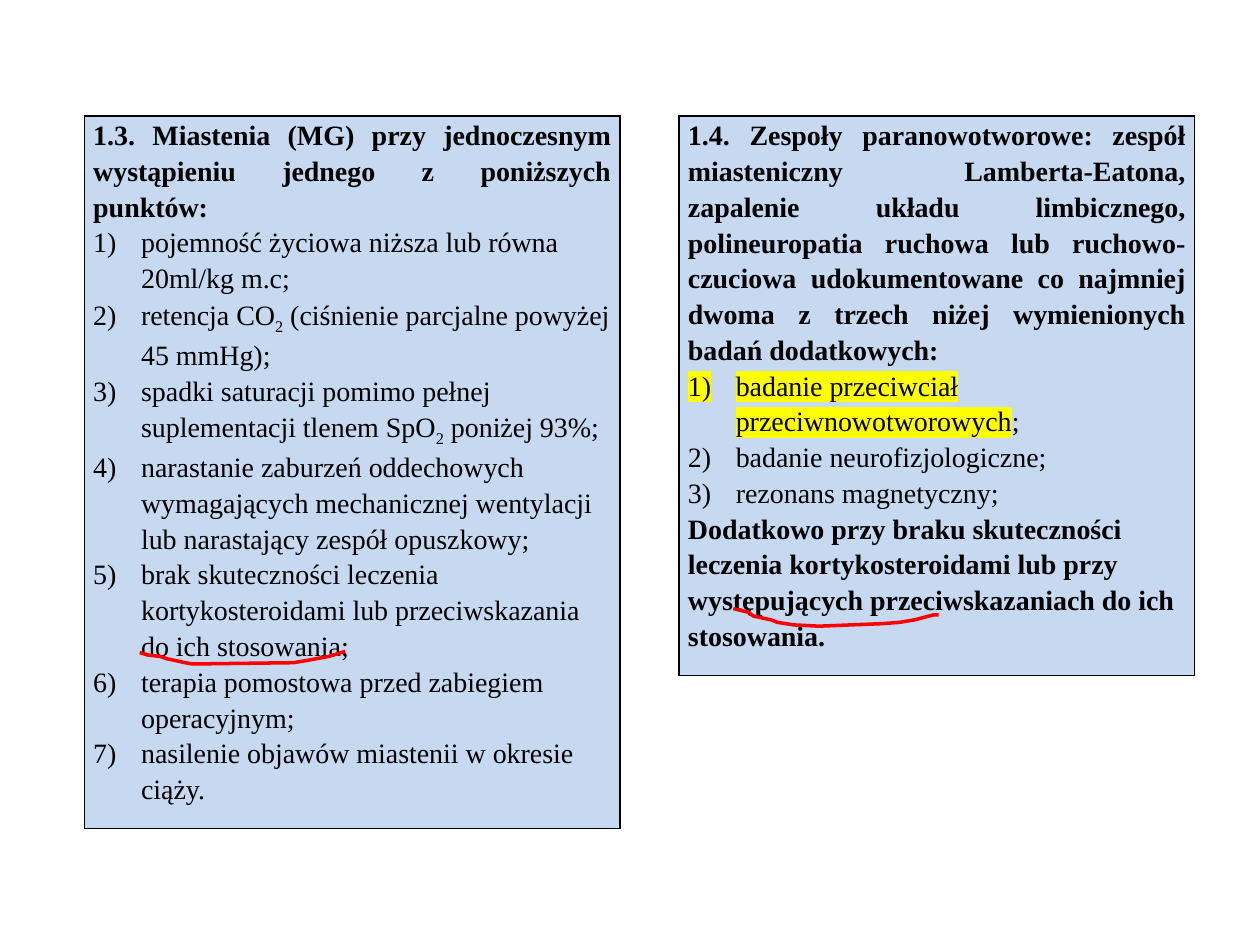
"""Build a slide with two criteria boxes and two hand-drawn red underlines."""
from dataclasses import dataclass

from lxml.etree import SubElement
from pptx import Presentation
from pptx.dml.color import RGBColor
from pptx.enum.text import MSO_ANCHOR as Anchor, PP_ALIGN as Align
from pptx.oxml import parse_xml
from pptx.oxml.ns import nsdecls, qn
from pptx.util import Inches, Pt

COLORS = {"text": "000000", "box": "C6D9F1", "border": "000000",
          "mark": "FFFF00", "stroke": "FF0000"}
FONT = {"name": "Times New Roman", "size": Pt(16)}
CELL = {"margin_left": Inches(0.07), "margin_right": Inches(0.07), "margin_top": 0,
        "margin_bottom": Inches(0.18), "vertical_anchor": Anchor.MIDDLE}
PLAIN_TABLE = {"first_row": False, "horz_banding": False}
INDENT = Inches(0.38)


@dataclass(frozen=True)
class Run:
    text: str
    sub: bool = False
    mark: bool = False


@dataclass(frozen=True)
class Para:
    runs: tuple[Run, ...]
    bold: bool = False
    numbered: bool = False
    align: Align | None = None


@dataclass(frozen=True)
class Box:
    left: float
    width: float
    height: float
    paras: tuple[Para, ...]


def heading(text: str, align: Align = Align.JUSTIFY) -> Para:
    return Para((Run(text),), bold=True, align=align)


def item(*runs: str | Run) -> Para:
    return Para(tuple(Run(r) if isinstance(r, str) else r for r in runs), numbered=True)


BOXES = (
    Box(0.67, 4.25, 5.65, (
        heading("1.3. Miastenia (MG) przy jednoczesnym wystąpieniu jednego z poniższych punktów:"),
        item("pojemność życiowa niższa lub równa 20ml/kg m.c;"),
        item("retencja CO", Run("2", sub=True), " (ciśnienie parcjalne powyżej 45 mmHg);"),
        item("spadki saturacji pomimo pełnej suplementacji tlenem SpO", Run("2", sub=True),
             " poniżej 93%;"),
        item("narastanie zaburzeń oddechowych wymagających mechanicznej wentylacji "
             "lub narastający zespół opuszkowy;"),
        item("brak skuteczności leczenia kortykosteroidami lub przeciwskazania "
             "do ich stosowania;"),
        item("terapia pomostowa przed zabiegiem operacyjnym;"),
        item("nasilenie objawów miastenii w okresie ciąży."),
    )),
    Box(5.39, 4.09, 4.44, (
        heading("1.4. Zespoły paranowotworowe: zespół miasteniczny Lamberta-Eatona, "
                "zapalenie układu limbicznego, polineuropatia ruchowa lub "
                "ruchowo-czuciowa udokumentowane co najmniej dwoma z trzech niżej "
                "wymienionych badań dodatkowych:"),
        item(Run("badanie przeciwciał przeciwnowotworowych", mark=True), ";"),
        item("badanie neurofizjologiczne;"),
        item("rezonans magnetyczny;"),
        heading("Dodatkowo przy braku skuteczności leczenia kortykosteroidami lub przy "
                "występujących przeciwskazaniach do ich stosowania.", Align.LEFT),
    )),
)

UNDERLINES = (
    ((1.11, 5.18), (1.18, 5.2), (1.27, 5.21), (1.33, 5.23), (1.38, 5.24), (1.47, 5.26),
     (1.53, 5.27), (2.33, 5.26), (2.45, 5.24), (2.61, 5.21), (2.71, 5.18), (2.74, 5.17)),
    ((5.82, 4.83), (5.94, 4.86), (5.98, 4.89), (6.12, 4.92), (6.17, 4.94), (6.3, 4.96),
     (6.5, 4.97), (7, 4.95), (7.14, 4.94), (7.26, 4.92), (7.41, 4.88), (7.45, 4.88)),
)


def rgb(key: str) -> RGBColor:
    return RGBColor.from_string(COLORS[key])


def apply(target, values: dict) -> None:
    for name, value in values.items():
        setattr(target, name, value)


def add_run(p, run: Run, bold: bool) -> None:
    r = p.add_run()
    r.text = run.text
    apply(r.font, FONT | {"bold": bold})
    r.font.color.rgb = rgb("text")
    rpr = r._r.get_or_add_rPr()
    if run.sub:
        rpr.set("baseline", "-25000")
    if run.mark:
        rpr.find(qn("a:solidFill")).addnext(parse_xml(
            f'<a:highlight {nsdecls("a")}><a:srgbClr val="{COLORS["mark"]}"/></a:highlight>'))


def add_para(p, para: Para) -> None:
    apply(p, {"line_spacing": 1.15, "alignment": para.align})
    if para.numbered:
        ppr = p._p.get_or_add_pPr()
        ppr.set("marL", str(INDENT))
        ppr.set("indent", str(-INDENT))
        SubElement(ppr, qn("a:buAutoNum"), type="arabicParenR")
    for run in para.runs:
        add_run(p, run, para.bold)


def add_borders(cell) -> None:
    tcpr = cell._tc.get_or_add_tcPr()
    for i, side in enumerate("LRTB"):
        tcpr.insert(i, parse_xml(
            f'<a:ln{side} {nsdecls("a")} w="{Pt(1)}"><a:solidFill>'
            f'<a:srgbClr val="{COLORS["border"]}"/></a:solidFill></a:ln{side}>'))


def add_box(s, box: Box) -> None:
    table = s.shapes.add_table(1, 1, Inches(box.left), Inches(0.92),
                               Inches(box.width), Inches(box.height)).table
    apply(table, PLAIN_TABLE)
    cell = table.cell(0, 0)
    apply(cell, CELL)
    cell.fill.solid()
    cell.fill.fore_color.rgb = rgb("box")
    add_borders(cell)
    tf = cell.text_frame
    for i, para in enumerate(box.paras):
        add_para(tf.add_paragraph() if i else tf.paragraphs[0], para)


def add_underline(s, points: tuple[tuple[float, float], ...]) -> None:
    start, *rest = [(Inches(x), Inches(y)) for x, y in points]
    builder = s.shapes.build_freeform(*start)
    builder.add_line_segments(rest, close=False)
    sp = builder.convert_to_shape()
    sp.shadow.inherit = False
    sp.fill.background()
    sp.line.color.rgb = rgb("stroke")
    sp.line.width = Pt(2)


def main() -> None:
    prs = Presentation()
    apply(prs, {"slide_width": Inches(10), "slide_height": Inches(7.5)})
    s = prs.slides.add_slide(prs.slide_layouts[6])
    for box in BOXES:
        add_box(s, box)
    for points in UNDERLINES:
        add_underline(s, points)
    prs.save("out.pptx")


if __name__ == "__main__":
    main()
